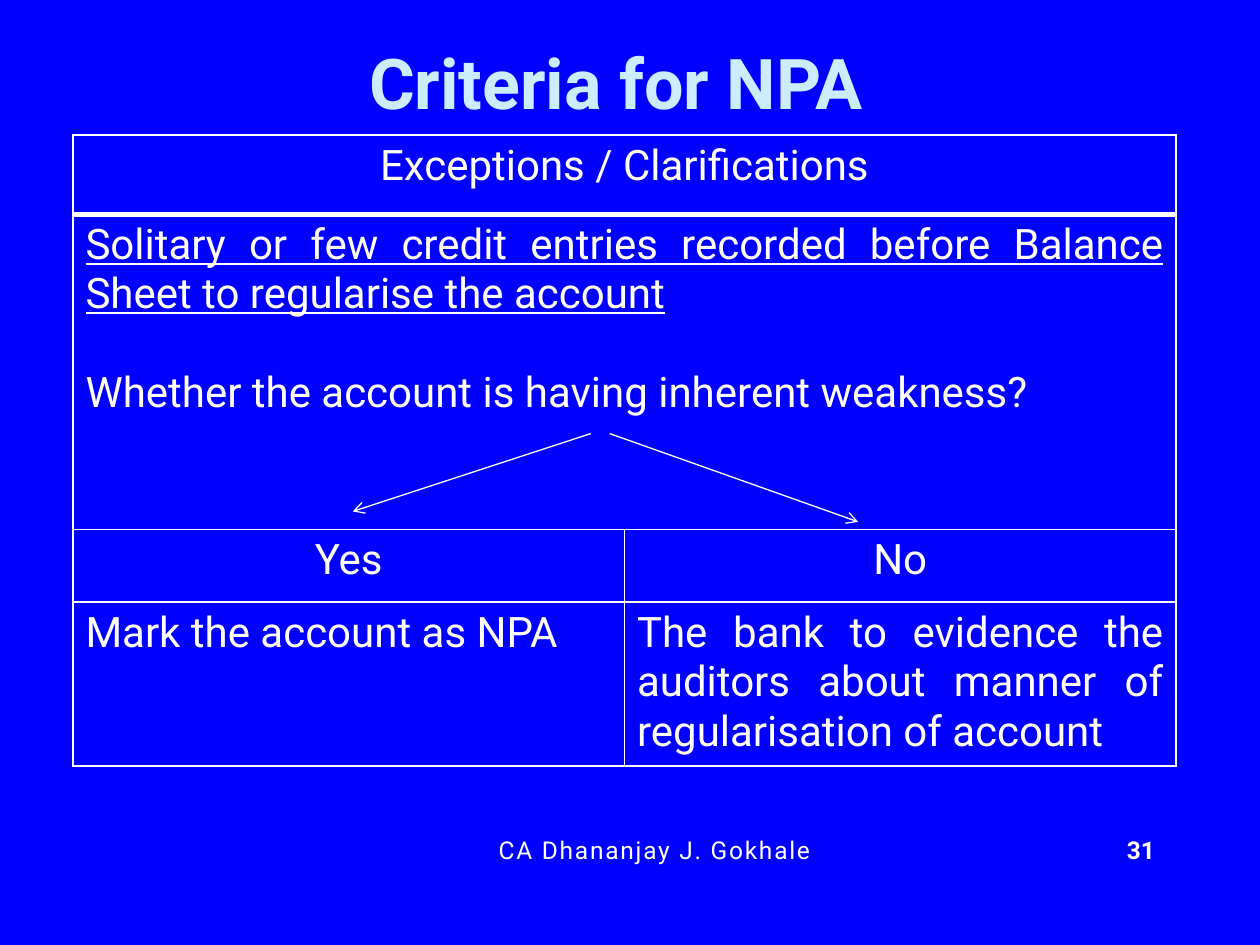
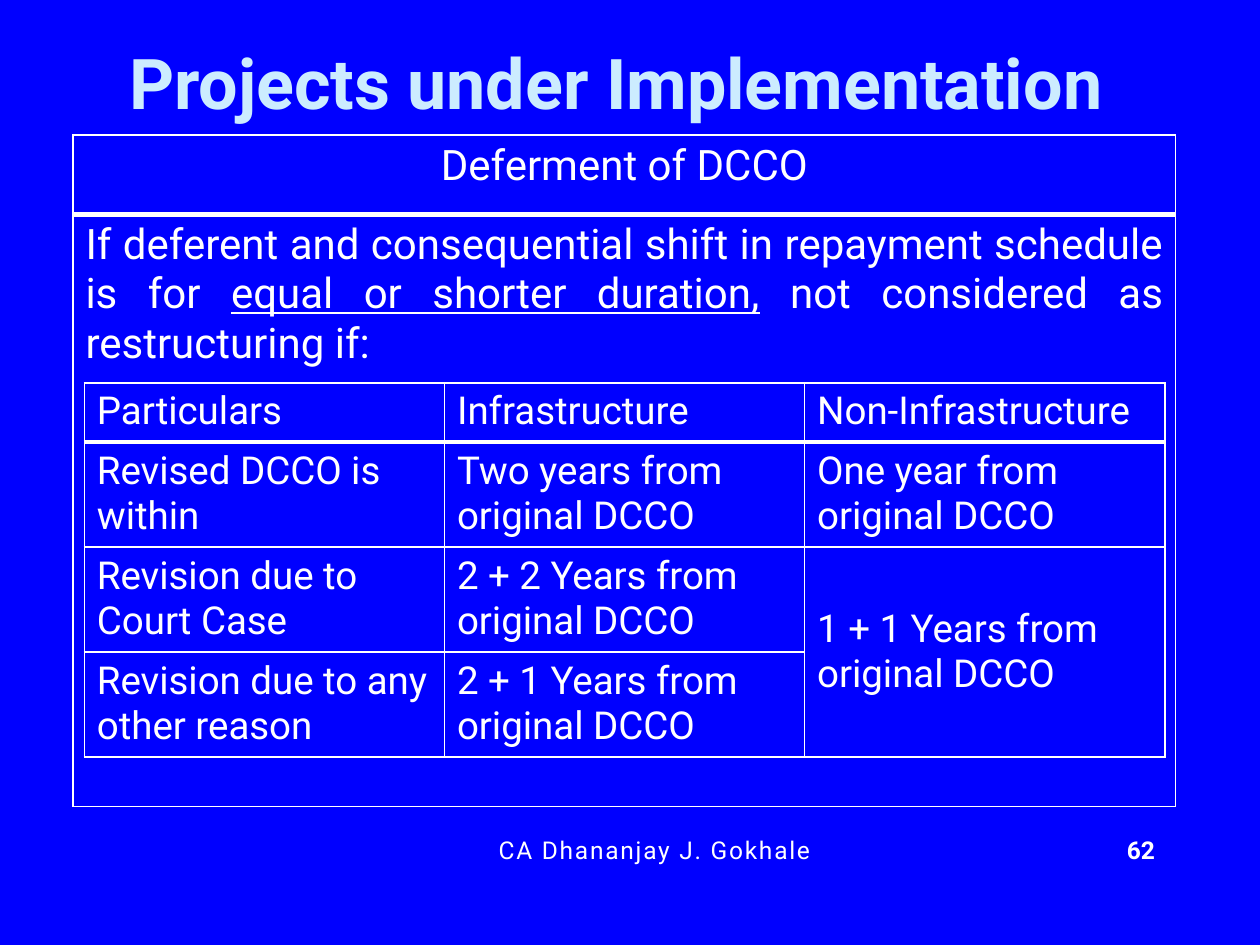
"""Build two slides on asset classification with ruled tables and a shared footer."""
from lxml import etree
from pptx import Presentation
from pptx import util as u
from pptx.dml.color import RGBColor
from pptx.enum import shapes, text
from pptx.oxml.ns import qn

BLUE = RGBColor(0x00, 0x00, 0xFF)
WHITE = RGBColor(0xFF, 0xFF, 0xFF)
PALE = RGBColor(0xCC, 0xEC, 0xFF)
FONT = "Roboto"
LEFT, CENTER, JUSTIFY = text.PP_ALIGN.LEFT, text.PP_ALIGN.CENTER, text.PP_ALIGN.JUSTIFY
THIN, THICK = 1, 3


def write(para, content, size, align, color=WHITE, bold=False):
    """Fill a paragraph with a string or with (string, underlined) parts."""
    parts = [(content, False)] if isinstance(content, str) else content
    para.alignment = align
    para.font.name, para.font.size = FONT, u.Pt(size)
    para.font.color.rgb, para.font.bold = color, bold
    for words, underlined in parts:
        span = para.add_run()
        span.text = words
        if underlined:
            span.font.underline = True


def add_grid(page, left, top, widths, heights):
    """Add an unfilled table with white rules and a thick rule under its first row."""
    frame = page.shapes.add_table(len(heights), len(widths), u.Cm(left), u.Cm(top),
                                  u.Cm(sum(widths)), u.Cm(sum(heights)))
    grid = frame.table
    grid.first_row = grid.horz_banding = False
    for column, width in zip(grid.columns, widths):
        column.width = u.Cm(width)
    for index, height in enumerate(heights):
        grid.rows[index].height = u.Cm(height)
        for cell in grid.rows[index].cells:
            properties = cell._tc.get_or_add_tcPr()
            for side in ("lnL", "lnR", "lnT", "lnB"):
                heavy = (index, side) in ((0, "lnB"), (1, "lnT"))
                rule = etree.SubElement(properties, qn(f"a:{side}"),
                                        w=str(u.Pt(THICK if heavy else THIN)))
                fill = etree.SubElement(rule, qn("a:solidFill"))
                etree.SubElement(fill, qn("a:srgbClr"), val=str(WHITE))
            cell.fill.background()
    return grid


deck = Presentation()
deck.slide_width, deck.slide_height = u.Cm(25.4), u.Cm(19.05)
backdrop = deck.slide_master.background.fill
backdrop.solid()
backdrop.fore_color.rgb = BLUE

pages = []
for heading, number in (("Criteria for NPA", "31"), ("Projects under Implementation", "62")):
    page = deck.slides.add_slide(deck.slide_layouts[5])
    pages.append(page)
    title = page.shapes.title
    title.left, title.top, title.width, title.height = u.Cm(1.3), u.Cm(0.74), u.Cm(22.23), u.Cm(1.8)
    title.text_frame.vertical_anchor = text.MSO_ANCHOR.MIDDLE
    title.text_frame.auto_size = text.MSO_AUTO_SIZE.NONE
    write(title.text_frame.paragraphs[0], heading, 40, CENTER, PALE, True)
    for words, left, width, height, bold in (("CA Dhananjay J. Gokhale", 4.29, 17.81, 0.99, False),
                                             (number, 22.3, 1.4, 1.27, True)):
        box = page.shapes.add_textbox(u.Cm(left), u.Cm(16.71), u.Cm(width), u.Cm(height))
        box.text_frame.word_wrap = True
        para = box.text_frame.paragraphs[0]
        write(para, words, 14, CENTER, bold=bold)
        if not bold:
            para.runs[0]._r.get_or_add_rPr().set("spc", "100")
criteria_page, projects_page = pages

criteria = add_grid(criteria_page, 1.47, 2.72, [11.12, 11.12], [1.6, 6.35, 1.47, 3.3])
for row in (0, 1):
    criteria.cell(row, 0).merge(criteria.cell(row, 1))
for row, column, words, align in (
        (0, 0, "Exceptions / Clarifications", CENTER),
        (1, 0, [("Solitary or few credit entries recorded before Balance Sheet "
                 "to regularise the account", True)], JUSTIFY),
        (2, 0, "Yes", CENTER),
        (2, 1, "No", CENTER),
        (3, 0, "Mark the account as NPA", JUSTIFY),
        (3, 1, "The bank to evidence the auditors about manner of "
               "regularisation of account", JUSTIFY)):
    write(criteria.cell(row, column).text_frame.paragraphs[0], words, 24, align)
question = criteria.cell(1, 0).text_frame.add_paragraph()
question.space_before = u.Pt(28)
write(question, "Whether the account is having inherent weakness?", 24, JUSTIFY)

for start_x, end_x, end_y in ((11.91, 7.11, 10.31), (12.29, 17.3, 10.52)):
    arrow = criteria_page.shapes.add_connector(shapes.MSO_CONNECTOR.STRAIGHT, u.Cm(start_x),
                                               u.Cm(8.74), u.Cm(end_x), u.Cm(end_y))
    arrow.line.color.rgb, arrow.line.width = WHITE, u.Pt(0.75)
    etree.SubElement(arrow.line._get_or_add_ln(), qn("a:tailEnd"), type="arrow")
    etree.SubElement(arrow._element.spPr, qn("a:effectLst"))

deferment = add_grid(projects_page, 1.47, 2.72, [22.23], [1.6, 11.94])
write(deferment.cell(0, 0).text_frame.paragraphs[0], "Deferment of DCCO", 24, CENTER)
write(deferment.cell(1, 0).text_frame.paragraphs[0],
      [("If deferent and consequential shift in repayment schedule is for ", False),
       ("equal or shorter duration,", True),
       (" not considered as restructuring if:", False)], 24, JUSTIFY)

limits = add_grid(projects_page, 1.7, 7.72, [7.26] * 3, [1.19] + [2.11] * 3)
limits.cell(2, 2).merge(limits.cell(3, 2))
limits.cell(2, 2).vertical_anchor = text.MSO_ANCHOR.MIDDLE
for row, entries in enumerate((
        ("Particulars", "Infrastructure", "Non-Infrastructure"),
        ("Revised DCCO is within", "Two years from original DCCO", "One year from original DCCO"),
        ("Revision due to Court Case", "2 + 2 Years from original DCCO",
         "1 + 1 Years from original DCCO"),
        ("Revision due to any other reason", "2 + 1 Years from original DCCO"))):
    for column, words in enumerate(entries):
        write(limits.cell(row, column).text_frame.paragraphs[0], words, 22, LEFT)

deck.save("out.pptx")
